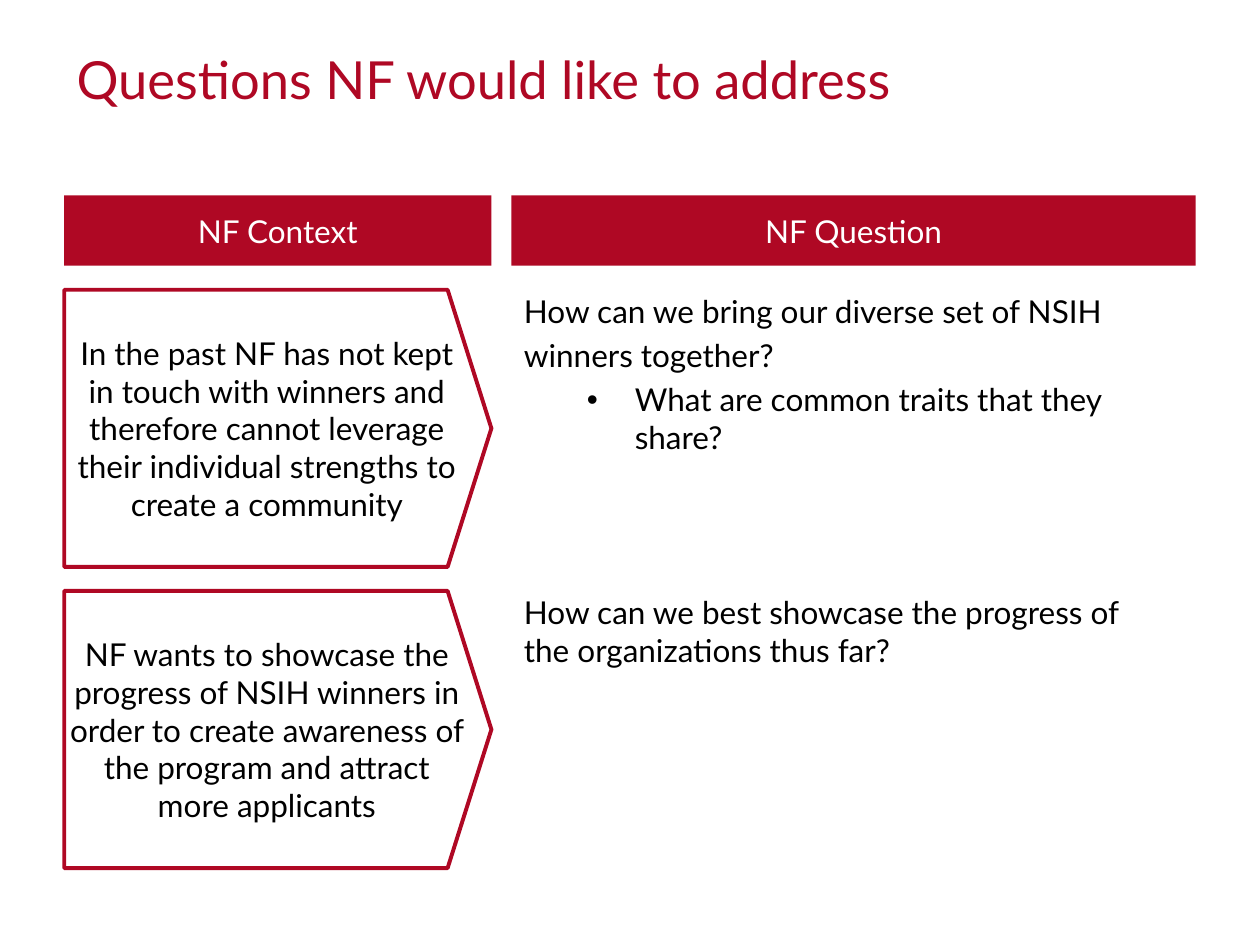
"""Build the slide that pairs each NF context with the question it raises."""
from lxml import etree
from pptx import Presentation
from pptx import util as u
from pptx.dml.color import RGBColor
from pptx.enum import shapes, text
from pptx.oxml.ns import qn

COLORS = {"red": "AF0824", "white": "FFFFFF", "black": "000000"}
LEFT, CONTEXT_W, GUTTER, QUESTION_W = 0.51, 3.39, 0.16, 5.43
QUESTION_LEFT = LEFT + CONTEXT_W + GUTTER
HEADER_TOP, HEADER_H = 1.55, 0.56
ROW_TOP, ROW_H, ROW_PITCH = 2.3, 2.2, 2.39
HANG = 0.38

rows = [
    ("In the past NF has not kept in touch with winners and therefore cannot "
     "leverage their individual strengths to create a community",
     [("How can we bring our diverse set of NSIH", HANG, None),
      ("winners together?", HANG, None),
      ("What are common traits that they share?", 0.88, "•")]),
    ("NF wants to showcase the progress of NSIH winners in order to create "
     "awareness of the program and attract more applicants",
     [("How can we best showcase the progress of the organizations thus far?", 0, None)]),
]

deck = Presentation()
deck.slide_width, deck.slide_height = u.Inches(10), u.Inches(7.5)
slide = deck.slides.add_slide(deck.slide_layouts[6])


def style(paragraph, color, size=18, align=text.PP_ALIGN.LEFT):
    paragraph.alignment = align
    font = paragraph.font
    font.name, font.size = "Lato", u.Pt(size)
    font.color.rgb = RGBColor.from_string(COLORS[color])


def add_panel(kind, box, words, fill, color):
    panel = slide.shapes.add_shape(kind, *map(u.Inches, box))
    panel.shadow.inherit = False
    panel.fill.solid()
    panel.fill.fore_color.rgb = RGBColor.from_string(COLORS[fill])
    panel.line.fill.background()
    panel.text_frame.text = words
    panel.text_frame.word_wrap = True
    panel.text_frame.vertical_anchor = text.MSO_ANCHOR.MIDDLE
    style(panel.text_frame.paragraphs[0], color, align=text.PP_ALIGN.CENTER)
    return panel


title = slide.shapes.add_textbox(*map(u.Inches, (LEFT, 0.28, 8.43, 0.69))).text_frame
title.text = "Questions NF would like to address"
title.word_wrap = True
title.vertical_anchor = text.MSO_ANCHOR.MIDDLE
style(title.paragraphs[0], "red", 30)

for heading, left, width in (("NF Context", LEFT, CONTEXT_W),
                             ("NF Question", QUESTION_LEFT, QUESTION_W)):
    add_panel(shapes.MSO_SHAPE.RECTANGLE, (left, HEADER_TOP, width, HEADER_H),
              heading, "red", "white")

for row, (context, questions) in enumerate(rows):
    top = ROW_TOP + row * ROW_PITCH
    arrow = add_panel(shapes.MSO_SHAPE.PENTAGON, (LEFT, top, CONTEXT_W, ROW_H),
                      context, "white", "black")
    arrow.adjustments[0] = 0.158
    arrow.line.color.rgb = RGBColor.from_string(COLORS["red"])
    arrow.line.width = u.Pt(2.25)
    inner = arrow.text_frame
    inner.margin_left = inner.margin_right = u.Inches(0.04)
    inner.margin_top = inner.margin_bottom = 0

    answer = slide.shapes.add_textbox(
        *map(u.Inches, (QUESTION_LEFT, top - 0.03, 5.12, 2.24))).text_frame
    answer.word_wrap = True
    for index, (question, indent, bullet) in enumerate(questions):
        paragraph = answer.add_paragraph() if index else answer.paragraphs[0]
        paragraph.text = question
        if index:
            paragraph.space_before = u.Pt(3.6)
        if indent:
            properties = paragraph._p.get_or_add_pPr()
            properties.set("marL", str(u.Inches(indent)))
            properties.set("indent", str(-u.Inches(HANG)))
        if bullet:
            paragraph.level = 1
            etree.SubElement(properties, qn("a:buFont")).set("typeface", "Arial")
            etree.SubElement(properties, qn("a:buChar")).set("char", bullet)
        style(paragraph, "black")

deck.save("out.pptx")
